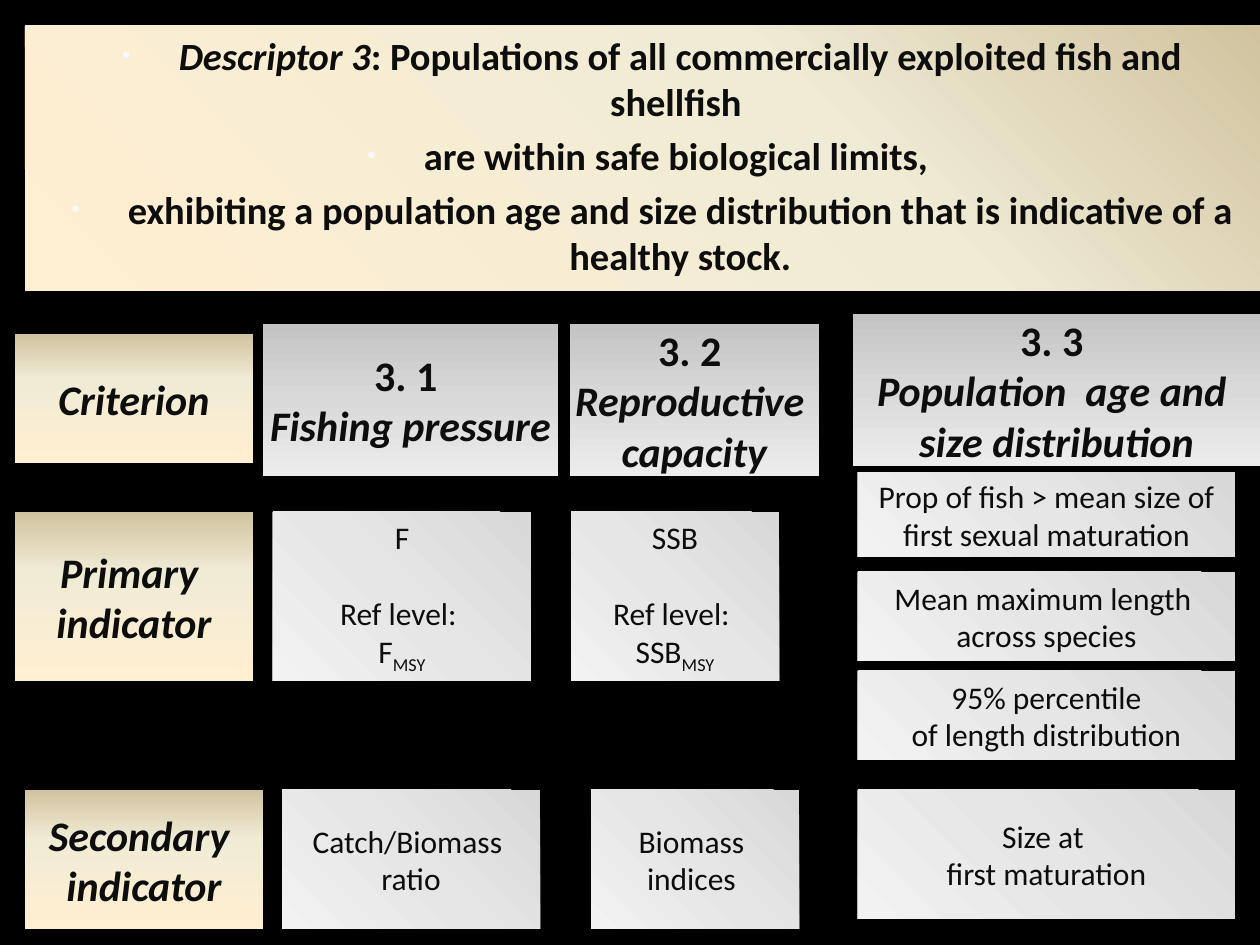
"""Build the Descriptor 3 slide: criteria and indicators for exploited fish stocks."""
from dataclasses import dataclass, field

import pptx
import pptx.dml.color
import pptx.enum.shapes
import pptx.enum.text
import pptx.oxml
import pptx.oxml.ns
import pptx.util

PX_PER_INCH = 126
COLORS = {
    "background": "000000",
    "text": "0D0D0D",
    "bullet": "F9F9F9",
    "sand_light": "FFEFD1",
    "sand_mid": "F0EBD5",
    "sand_dark": "D1C39F",
    "header_dark": "C4C4C4",
    "header_mid": "D9D9D9",
    "header_light": "ECECEC",
    "cell_dark": "D8D8D8",
    "cell_mid": "E6E6E6",
    "cell_light": "F2F2F2",
}
SAND = ((0, "sand_light"), (65, "sand_mid"), (100, "sand_dark"))
SILVER = ((0, "header_dark"), (50, "header_mid"), (100, "header_light"))
PALE = ((0, "cell_dark"), (50, "cell_mid"), (100, "cell_light"))
SHAPES = pptx.enum.shapes.MSO_SHAPE
ANCHORS = pptx.enum.text.MSO_ANCHOR
AUTO_SIZES = pptx.enum.text.MSO_AUTO_SIZE


@dataclass(frozen=True)
class Style:
    """Look shared by boxes of one kind."""
    stops: tuple
    angle: int
    size: int
    font: dict = field(default_factory=dict)
    preset: SHAPES = SHAPES.FLOWCHART_PROCESS
    frame: dict = field(default_factory=lambda: {
        "word_wrap": False, "vertical_anchor": ANCHORS.MIDDLE})
    bulleted: bool = False


@dataclass(frozen=True)
class Run:
    """Piece of text with its own formats."""
    text: str
    font: dict = field(default_factory=dict)
    baseline: int = 0


@dataclass(frozen=True)
class Line:
    """One paragraph of a box."""
    runs: tuple
    space_before: float = 0


@dataclass(frozen=True)
class Box:
    """Filled rectangle placed in px."""
    left: int
    top: int
    width: int
    height: int
    style: Style
    lines: tuple


BANNER = Style(SAND, 315, 22, {"bold": True}, SHAPES.RECTANGLE,
               {"word_wrap": True, "vertical_anchor": ANCHORS.TOP,
                "auto_size": AUTO_SIZES.SHAPE_TO_FIT_TEXT}, True)
LABEL = Style(SAND, 270, 24, {"bold": True, "italic": True})
HEADER = Style(SILVER, 90, 24, {"bold": True})
CELL = Style(PALE, 135, 18)
ITALIC = {"italic": True}


def plain(*texts: str) -> tuple:
    """Return one line per text."""
    return tuple(Line((Run(text),)) for text in texts)


def criterion(number: str, *names: str) -> tuple:
    """Return a criterion number followed by its italic name."""
    return plain(number) + tuple(Line((Run(name, ITALIC),)) for name in names)


def reference(symbol: str) -> tuple:
    """Return an indicator and its reference level."""
    return (*plain(symbol), Line((Run("Ref level: "),), 22),
            Line((Run(symbol), Run("MSY", baseline=-25000))))


BANNER_LINES = (
    Line((Run("Descriptor 3", ITALIC),
          Run(": Populations of all commercially exploited fish and shellfish ")), 4.4),
    Line((Run("are within safe biological limits, "),), 4.4),
    Line((Run("exhibiting a population age and size distribution that is "
              "indicative of a healthy stock."),), 4.4),
)
BOXES = (
    Box(25, 26, 1235, 265, BANNER, BANNER_LINES),
    Box(15, 334, 238, 129, LABEL, plain("Criterion")),
    Box(15, 512, 238, 169, LABEL, plain("Primary ", "indicator")),
    Box(25, 790, 238, 139, LABEL, plain("Secondary ", "indicator")),
    Box(263, 324, 295, 152, HEADER, criterion("3. 1 ", "Fishing pressure")),
    Box(570, 324, 249, 152, HEADER, criterion("3. 2 ", "Reproductive ", "capacity")),
    Box(853, 314, 407, 152, HEADER,
        criterion("3. 3 ", "Population  age and ", "size distribution")),
    Box(273, 512, 258, 169, CELL, reference("F")),
    Box(571, 512, 208, 169, CELL, reference("SSB")),
    Box(858, 472, 377, 85, CELL,
        plain("Prop of fish > mean size of", "first sexual maturation")),
    Box(858, 572, 377, 89, CELL, plain("Mean maximum length ", "across species")),
    Box(858, 671, 377, 89, CELL, plain("95% percentile", "of length distribution")),
    Box(282, 790, 258, 139, CELL, plain("Catch/Biomass ", "ratio")),
    Box(591, 790, 208, 139, CELL, plain("Biomass ", "indices ")),
    Box(858, 790, 377, 129, CELL, plain("Size at ", "first maturation")),
)


def emu(px: float) -> pptx.util.Emu:
    """Turn px into EMU."""
    return pptx.util.Emu(round(px * 914400 / PX_PER_INCH))


def rgb(name: str) -> pptx.dml.color.RGBColor:
    """Return a named color."""
    return pptx.dml.color.RGBColor.from_string(COLORS[name])


def apply(target, formats: dict) -> None:
    """Set each format value on the target."""
    for name, value in formats.items():
        setattr(target, name, value)


def fill_gradient(shape, stops: tuple, angle: int) -> None:
    """Fill the shape with a linear gradient."""
    stop_xml = "".join(
        f'<a:gs pos="{position * 1000}"><a:srgbClr val="{COLORS[name]}"/></a:gs>'
        for position, name in stops)
    gradient = pptx.oxml.parse_xml(
        f'<a:gradFill rotWithShape="1" {pptx.oxml.ns.nsdecls("a")}>'
        f'<a:gsLst>{stop_xml}</a:gsLst>'
        f'<a:lin ang="{angle * 60000}" scaled="0"/></a:gradFill>')
    shape.element.spPr.find(pptx.oxml.ns.qn("a:prstGeom")).addnext(gradient)


def add_bullet(paragraph) -> None:
    """Give the paragraph a hanging bullet."""
    properties = paragraph._p.get_or_add_pPr()
    properties.set("marL", str(pptx.util.Inches(0.6)))
    properties.set("indent", str(pptx.util.Inches(-0.45)))
    for tag, content in (
            ('buClr', f'><a:srgbClr val="{COLORS["bullet"]}"/></a:buClr>'),
            ('buSzPct', ' val="65000"/>'),
            ('buFont', ' typeface="Arial"/>'),
            ('buChar', ' char="•"/>')):
        properties.append(pptx.oxml.parse_xml(
            f'<a:{tag} {pptx.oxml.ns.nsdecls("a")}{content}'))


def write_line(paragraph, line: Line, style: Style) -> None:
    """Write the runs of one line."""
    apply(paragraph, {"alignment": pptx.enum.text.PP_ALIGN.CENTER,
                      "space_before": pptx.util.Pt(line.space_before)})
    if style.bulleted:
        add_bullet(paragraph)
    for piece in line.runs:
        run = paragraph.add_run()
        run.text = piece.text
        apply(run.font, {"name": "Calibri", "size": pptx.util.Pt(style.size),
                         **style.font, **piece.font})
        run.font.color.rgb = rgb("text")
        if piece.baseline:
            run._r.get_or_add_rPr().set("baseline", str(piece.baseline))


def draw_box(slide, box: Box) -> None:
    """Draw one box with its text."""
    shape = slide.shapes.add_shape(
        box.style.preset, *map(emu, (box.left, box.top, box.width, box.height)))
    shape.shadow.inherit = False
    shape.line.fill.background()
    fill_gradient(shape, box.style.stops, box.style.angle)
    frame = shape.text_frame
    apply(frame, box.style.frame)
    for index, line in enumerate(box.lines):
        paragraph = frame.add_paragraph() if index else frame.paragraphs[0]
        write_line(paragraph, line, box.style)


def main() -> None:
    """Build and save the presentation."""
    presentation = pptx.Presentation()
    apply(presentation, {"slide_width": emu(1260), "slide_height": emu(945)})
    slide = presentation.slides.add_slide(presentation.slide_layouts[6])
    slide.background.fill.solid()
    slide.background.fill.fore_color.rgb = rgb("background")
    for box in BOXES:
        draw_box(slide, box)
    presentation.save("out.pptx")


if __name__ == "__main__":
    main()
